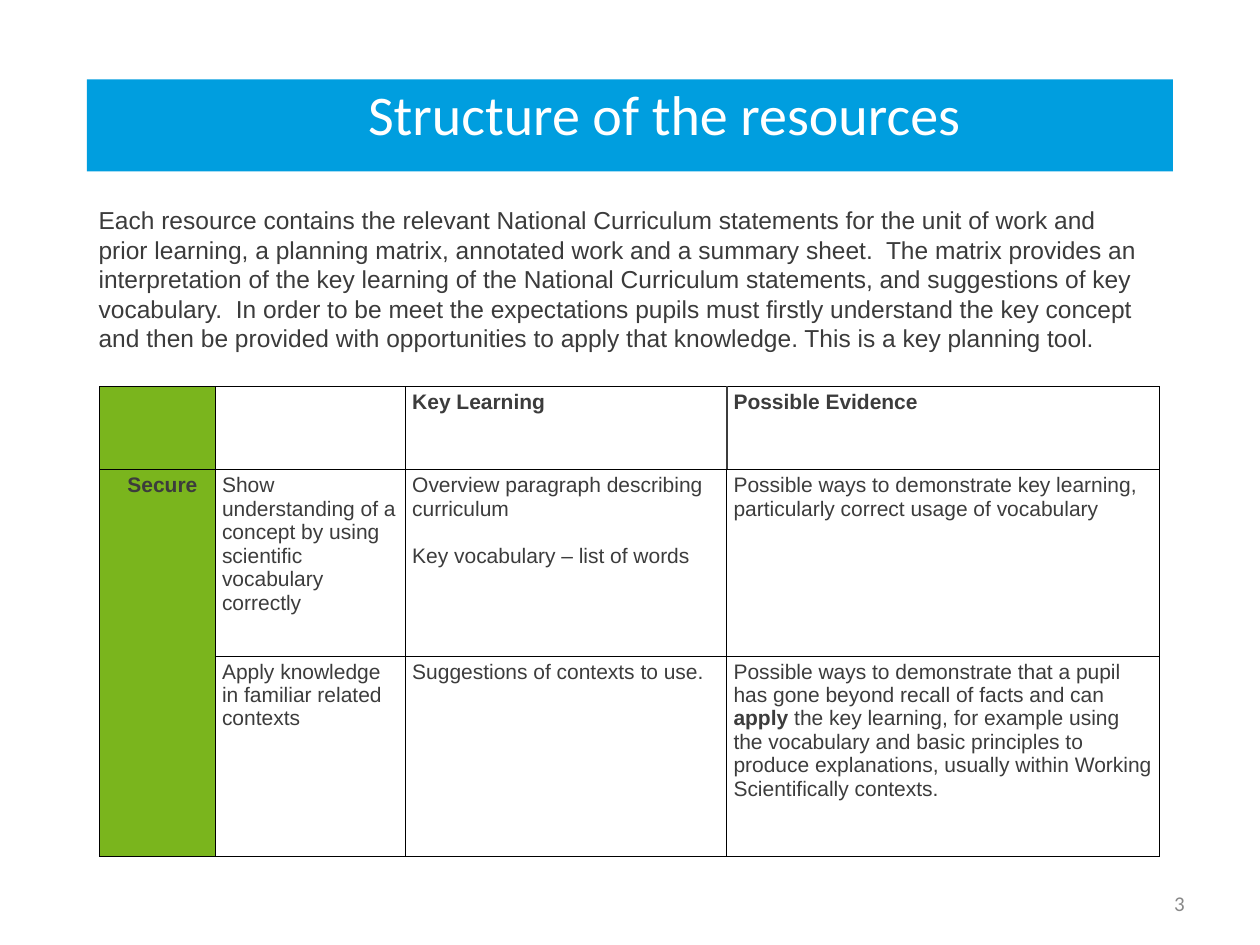
"""Build the slide on the structure of the resources."""
from typing import NamedTuple

from lxml.etree import SubElement as Sub
from pptx import Presentation
from pptx.dml.color import RGBColor as Rgb
from pptx.enum.text import MSO_ANCHOR as Anchor, MSO_AUTO_SIZE as Auto, PP_ALIGN as Align
from pptx.oxml.ns import qn
from pptx.util import Pt

BLUE, GREEN, BLACK, WHITE = "009EDF", "7AB51D", "000000", "FFFFFF"
BODY, INK, GREY = "3B3B3B", "3C3C3C", "888888"
COLS = (66.2, 108.7, 183.6, 247)
ROWS = (47.5, 106.5, 114.5)
LEAD = 13.4
INTRO = (
    "Each resource contains the relevant National Curriculum statements for the unit of work "
    "and prior learning, a planning matrix, annotated work and a summary sheet.  The matrix "
    "provides an interpretation of the key learning of the National Curriculum statements, and "
    "suggestions of key vocabulary.  In order to be meet the expectations pupils must firstly "
    "understand the key concept and then be provided with opportunities to apply that "
    "knowledge. This is a key planning tool."
)


class Box(NamedTuple):
    left: float
    top: float
    width: float
    height: float


class Font(NamedTuple):
    name: str
    size: float
    color: str


class Entry(NamedTuple):
    row: int
    col: int
    paras: tuple
    bold: bool = False


ENTRIES = (
    Entry(0, 2, ("Key Learning",), True),
    Entry(0, 3, ("Possible Evidence",), True),
    Entry(1, 0, ("Secure",), True),
    Entry(1, 1, ("Show understanding of a concept by using scientific vocabulary correctly",)),
    Entry(1, 2, ("Overview paragraph describing curriculum", "Key vocabulary – list of words")),
    Entry(1, 3, ("Possible ways to demonstrate key learning, particularly correct usage of vocabulary",)),
    Entry(2, 1, ("Apply knowledge in familiar related contexts",)),
    Entry(2, 2, ("Suggestions of contexts to use.",)),
    Entry(2, 3, (
        "Possible ways to demonstrate that a pupil has gone beyond recall of facts and can "
        "*apply* the key learning, for example using the vocabulary and basic principles to "
        "produce explanations, usually within Working Scientifically contexts.",)),
)


def paint(fmt, color: str) -> None:
    """Give a fill or font one solid colour."""
    if hasattr(fmt, "solid"):
        fmt.solid()
        fmt.fore_color.rgb = Rgb.from_string(color)
    else:
        fmt.color.rgb = Rgb.from_string(color)


def style(run, font: Font, bold: bool = False) -> None:
    """Set the face, size, colour and weight of a run."""
    run.font.name, run.font.size, run.font.bold = font.name, Pt(font.size), bold
    paint(run.font, font.color)


def place(shape, box: Box) -> None:
    """Move and size a shape."""
    shape.left, shape.top, shape.width, shape.height = map(Pt, box)


def write(shape, text: str, font: Font, indent: float) -> None:
    """Put one left-aligned paragraph at the top of a shape."""
    frame = shape.text_frame
    frame.text = text
    frame.word_wrap, frame.auto_size = True, Auto.NONE
    frame.vertical_anchor = Anchor.TOP
    frame.margin_left = Pt(indent)
    frame.margin_top = frame.margin_right = frame.margin_bottom = 0
    para = frame.paragraphs[0]
    para.alignment = Align.LEFT
    style(para.runs[0], font)


def note(slide, box: Box, text: str, font: Font, indent: float):
    """Add a text box and return its paragraph."""
    shape = slide.shapes.add_textbox(*map(Pt, box))
    write(shape, text, font, indent)
    return shape.text_frame.paragraphs[0]


def edge(cell, side: str, color: str, width: float) -> None:
    """Draw one border of a cell."""
    props = cell._tc.get_or_add_tcPr()
    line = Sub(props, qn(f"a:ln{side}"), w=str(Pt(width)))
    fill = Sub(line, qn("a:solidFill"))
    Sub(fill, qn("a:srgbClr"), val=color)


def fill_in(cell, entry: Entry, font: Font) -> None:
    """Write the paragraphs of an entry, with starred words in bold."""
    frame = cell.text_frame
    for i, text in enumerate(entry.paras):
        para = frame.add_paragraph() if i else frame.paragraphs[0]
        para.line_spacing = Pt(LEAD)
        para.space_before = Pt(LEAD if i else 0)
        for j, part in enumerate(text.split("*")):
            run = para.add_run()
            run.text = part
            style(run, font, entry.bold or j % 2 == 1)


def grid(slide, box: Box) -> None:
    """Add the planning matrix."""
    table = slide.shapes.add_table(len(ROWS), len(COLS), *map(Pt, box)).table
    table.first_row = table.horz_banding = False
    for col, width in zip(table.columns, COLS):
        col.width = Pt(width)
    for row, height in zip(table.rows, ROWS):
        row.height = Pt(height)
    table.cell(1, 0).merge(table.cell(2, 0))
    for r in range(len(ROWS)):
        for c in range(len(COLS)):
            cell = table.cell(r, c)
            cell.margin_left = cell.margin_right = Pt(3.8)
            cell.margin_top = cell.margin_bottom = Pt(2.2)
            for side in "LRTB":
                inner = r == 0 and (c, side) in ((2, "R"), (3, "L"))
                edge(cell, side, *((INK, 1) if inner else (BLACK, 0.75)))
            if c == 0:
                paint(cell.fill, GREEN)
            else:
                cell.fill.background()
    for entry in ENTRIES:
        fill_in(table.cell(entry.row, entry.col), entry, Font("Arial", 12, INK))
    label = table.cell(1, 0)
    label.margin_left = Pt(9.5)
    label.text_frame.paragraphs[0].alignment = Align.CENTER


def main() -> None:
    """Build and save the slide."""
    deck = Presentation()
    deck.slide_width, deck.slide_height = Pt(720), Pt(540)
    slide = deck.slides.add_slide(deck.slide_layouts[5])
    title = slide.shapes.title
    place(title, Box(49.7, 45.4, 620.6, 52.6))
    paint(title.fill, BLUE)
    write(title, "Structure of the resources", Font("Calibri", 32, WHITE), 160.6)
    intro = note(slide, Box(55.4, 117.4, 601, 84), INTRO, Font("Arial", 14, BODY), 1)
    intro.line_spacing = Pt(16.8)
    grid(slide, Box(56.9, 221, sum(COLS), sum(ROWS)))
    note(slide, Box(661.7, 509, 17.3, 14.4), "3", Font("Calibri", 12, GREY), 9.2)
    deck.save("out.pptx")


if __name__ == "__main__":
    main()
